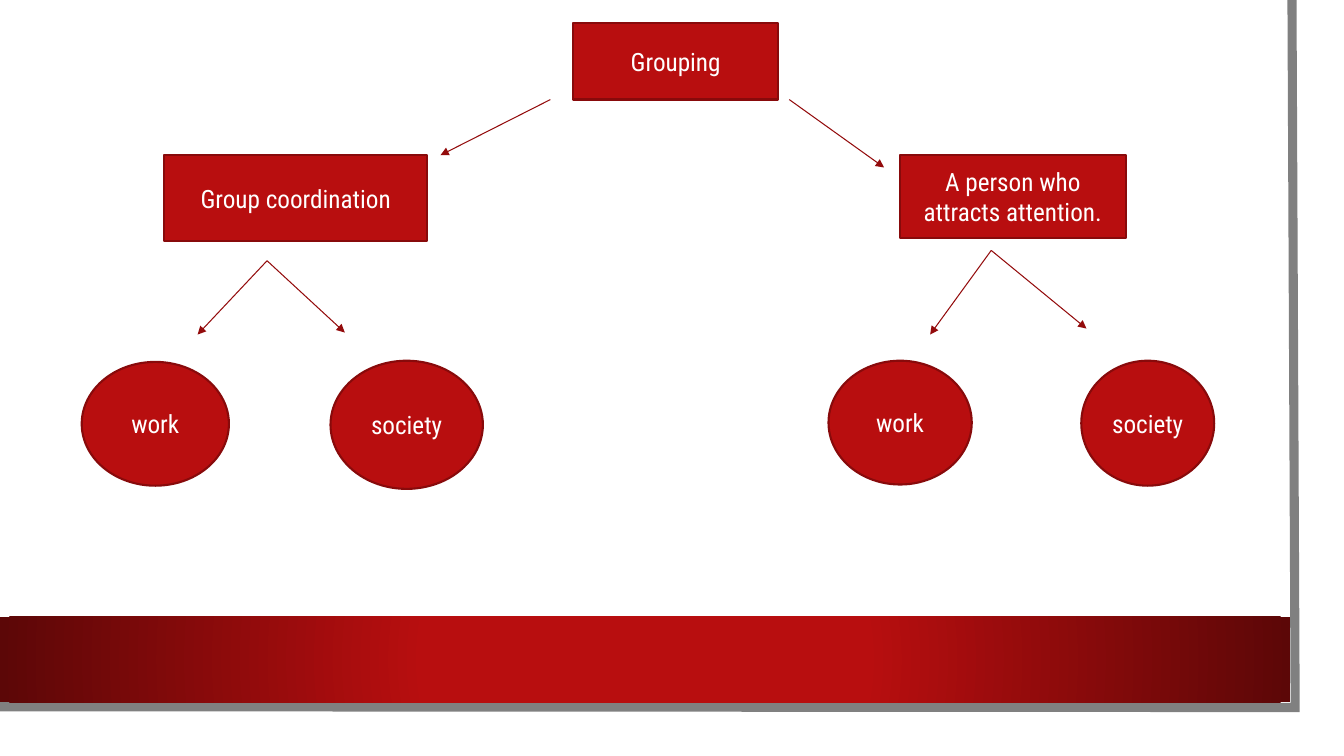
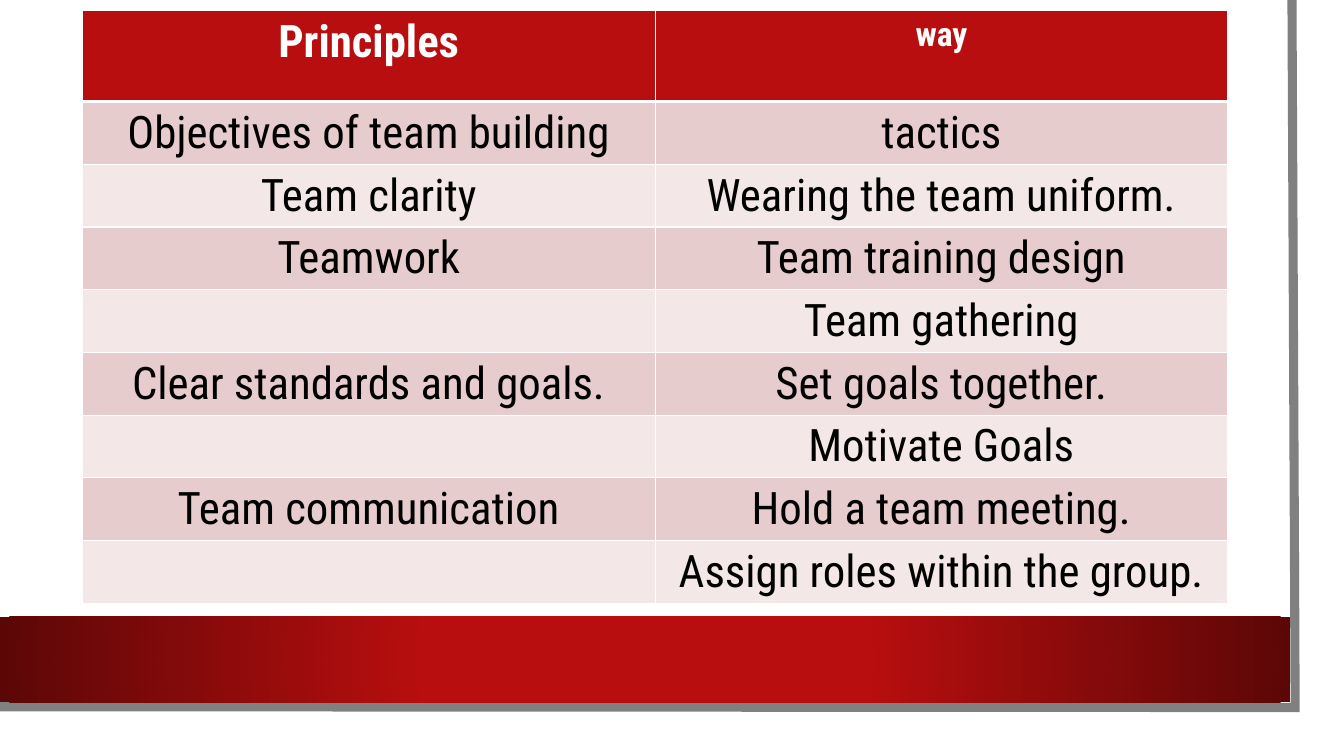
from lxml import etree
from pptx import Presentation
from pptx import util as u
from pptx.dml.color import RGBColor
from pptx.enum import shapes, text
from pptx.oxml import parse_xml
from pptx.oxml.ns import nsdecls, qn

RED = RGBColor(0xB8, 0x0E, 0x0F)
DARK_RED = RGBColor(0x5C, 0x07, 0x07)
OUTLINE = RGBColor(0x88, 0x0A, 0x0B)
ARROW = RGBColor(0x93, 0x0B, 0x0C)
ROSE = RGBColor(0xE6, 0xCC, 0xCC)
PALE_ROSE = RGBColor(0xF3, 0xE7, 0xE7)
GREY = RGBColor(0x80, 0x80, 0x80)
WHITE = RGBColor(0xFF, 0xFF, 0xFF)
BLACK = RGBColor(0, 0, 0)

FONT = "Roboto Condensed"
RECTANGLE = shapes.MSO_SHAPE.RECTANGLE
OVAL = shapes.MSO_SHAPE.OVAL

BOXES = [
    (RECTANGLE, "Grouping", 14.45, 0.58, 5.16, 1.93),
    (RECTANGLE, "Group coordination", 4.14, 3.91, 6.63, 2.16),
    (RECTANGLE, "A person who attracts attention.", 22.68, 3.91, 5.69, 2.08),
    (OVAL, "work", 2.06, 9.12, 3.71, 3.12),
    (OVAL, "society", 8.33, 9.09, 3.84, 3.23),
    (OVAL, "work", 20.88, 9.09, 3.61, 3.12),
    (OVAL, "society", 27.25, 9.09, 3.35, 3.15),
]
ARROWS = [
    (13.87, 2.51, 11.1, 3.91),
    (19.89, 2.51, 22.28, 4.22),
    (6.73, 6.57, 4.98, 8.43),
    (6.73, 6.57, 8.69, 8.38),
    (24.98, 6.31, 23.44, 8.43),
    (24.98, 6.31, 27.38, 8.28),
]
HEADINGS = [("Principles", 32), ("way", 24)]
ROWS = [
    ("Objectives of team building", "tactics"),
    ("Team clarity", "Wearing the team uniform."),
    ("Teamwork", "Team training design"),
    ("", "Team gathering"),
    ("Clear standards and goals.", "Set goals together."),
    ("", "Motivate Goals"),
    ("Team communication", "Hold a team meeting."),
    ("", "Assign roles within the group."),
]


class Designer:
    """Holds the deck's style and the slide being drawn."""

    def __init__(self):
        self.deck = Presentation()
        self.deck.slide_width = u.Cm(33.87)
        self.deck.slide_height = u.Cm(19.05)
        self.page = None

    def new_page(self):
        self.page = self.deck.slides.add_slide(self.deck.slide_layouts[6])
        paper = self.shape(RECTANGLE, 0, 0, 33.27, 18.47, WHITE)
        paper.line.fill.background()
        self.frame()
        self.band()

    def shape(self, kind, left, top, width, height, fill):
        shape = self.page.shapes.add_shape(
            kind, u.Cm(left), u.Cm(top), u.Cm(width), u.Cm(height))
        shape.shadow.inherit = False
        shape.fill.solid()
        shape.fill.fore_color.rgb = fill
        return shape

    def frame(self):
        """Draws the grey edge along the right and bottom of the paper."""
        builder = self.page.shapes.build_freeform(u.Cm(32.56), 0, scale=1.0)
        corners = [(32.64, 17.83), (-0.08, 17.81)]
        builder.add_line_segments(
            [(u.Cm(x), u.Cm(y)) for x, y in corners], close=False)
        edge = builder.convert_to_shape()
        edge.shadow.inherit = False
        edge.fill.background()
        edge.line.color.rgb = GREY
        edge.line.width = u.Pt(6.5)
        etree.SubElement(edge.line._get_or_add_ln(), qn("a:miter"), lim="800000")

    def band(self):
        """Draws the bottom band, which darkens from its centre outwards."""
        band = self.shape(RECTANGLE, 0, 15.54, 32.51, 2.16, RED)
        band.line.fill.background()
        stops = "".join(
            f'<a:gs pos="{position}"><a:srgbClr val="{colour}"/></a:gs>'
            for position, colour in [(34000, RED), (100000, DARK_RED)])
        gradient = parse_xml(
            f'<a:gradFill {nsdecls("a")} rotWithShape="1"><a:gsLst>{stops}</a:gsLst>'
            '<a:path path="circle">'
            '<a:fillToRect l="50000" t="50000" r="50000" b="50000"/>'
            '</a:path></a:gradFill>')
        properties = band._element.spPr
        properties.replace(properties.find(qn("a:solidFill")), gradient)

    def label(self, frame, wording, size, colour, bold=False):
        para = frame.paragraphs[0]
        para.alignment = text.PP_ALIGN.CENTER
        span = para.add_run()
        span.text = wording
        span.font.name = FONT
        span.font.size = u.Pt(size)
        span.font.bold = bold
        span.font.color.rgb = colour

    def box(self, kind, wording, left, top, width, height):
        box = self.shape(kind, left, top, width, height, RED)
        box.line.color.rgb = OUTLINE
        box.line.width = u.Pt(1.5)
        box.text_frame.word_wrap = True
        self.label(box.text_frame, wording, 18, WHITE)

    def arrow(self, *ends):
        arrow = self.page.shapes.add_connector(
            shapes.MSO_CONNECTOR.STRAIGHT, *(u.Cm(end) for end in ends))
        arrow.line.color.rgb = ARROW
        arrow.line.width = u.Pt(0.75)
        etree.SubElement(
            arrow.line._get_or_add_ln(), qn("a:tailEnd"), type="triangle")
        etree.SubElement(arrow._element.spPr, qn("a:effectLst"))

    def cell(self, cell, fill, bottom=1):
        """Gives a cell white borders and a fill; bottom is a width in points."""
        properties = cell._tc.get_or_add_tcPr()
        for side, width in [("L", 1), ("R", 1), ("T", 1), ("B", bottom)]:
            properties.append(parse_xml(
                f'<a:ln{side} {nsdecls("a")} w="{u.Pt(width)}"><a:solidFill>'
                f'<a:srgbClr val="{WHITE}"/></a:solidFill></a:ln{side}>'))
        cell.fill.solid()
        cell.fill.fore_color.rgb = fill

    def table(self, headings, rows, left, top, column_width, head_height, row_height):
        table = self.page.shapes.add_table(
            len(rows) + 1, len(headings), u.Cm(left), u.Cm(top),
            u.Cm(column_width * len(headings)),
            u.Cm(head_height + row_height * len(rows))).table
        for column in table.columns:
            column.width = u.Cm(column_width)
        for row in table.rows:
            row.height = u.Cm(row_height)
        table.rows[0].height = u.Cm(head_height)
        for column, (wording, size) in enumerate(headings):
            cell = table.cell(0, column)
            self.cell(cell, RED, bottom=3)
            self.label(cell.text_frame, wording, size, WHITE, bold=True)
        for number, row in enumerate(rows, 1):
            for column, wording in enumerate(row):
                cell = table.cell(number, column)
                self.cell(cell, ROSE if number % 2 else PALE_ROSE)
                if wording:
                    self.label(cell.text_frame, wording, 32, BLACK)


def main():
    designer = Designer()

    designer.new_page()
    for box in BOXES:
        designer.box(*box)
    for arrow in ARROWS:
        designer.arrow(*arrow)

    designer.new_page()
    designer.table(HEADINGS, ROWS, left=2.08, top=0.27, column_width=14.43,
                   head_height=2.29, row_height=1.58)

    designer.deck.save("out.pptx")


if __name__ == "__main__":
    main()
